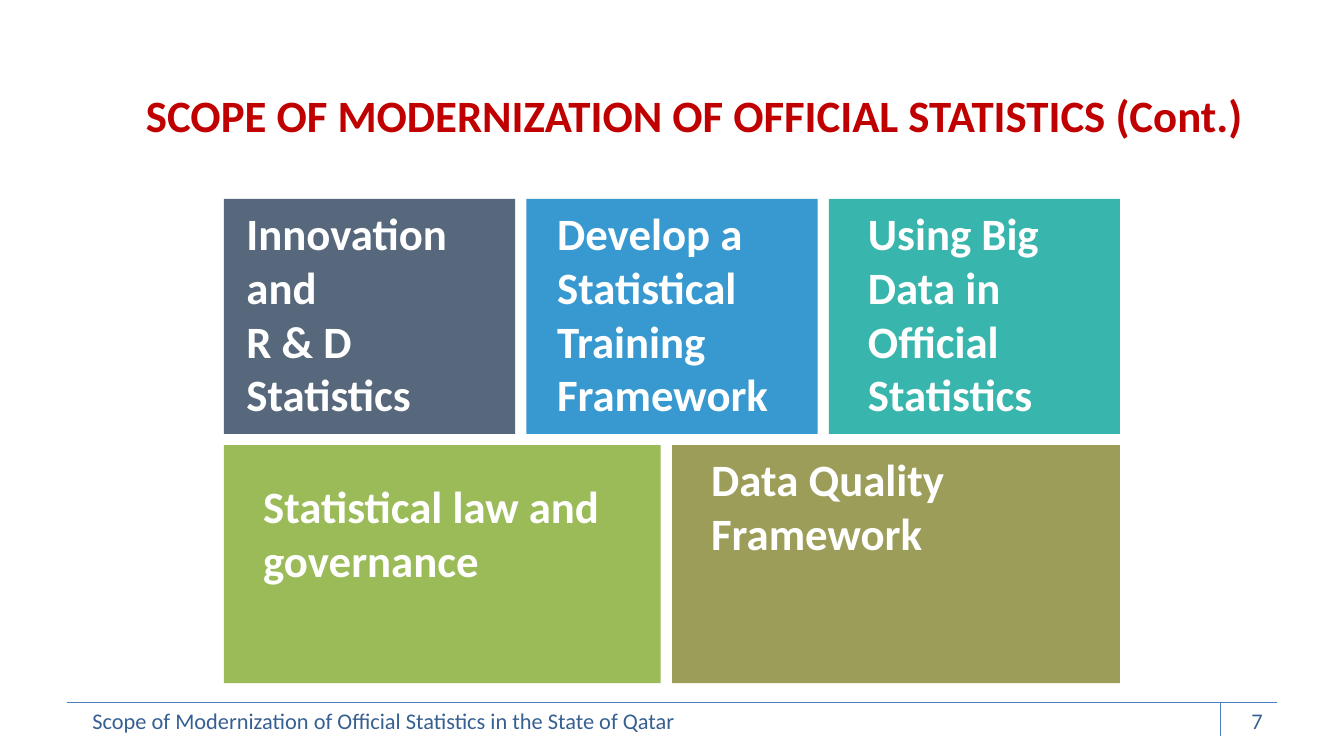
from dataclasses import dataclass

from lxml.etree import SubElement
from pptx import Presentation
from pptx.dml.color import RGBColor
from pptx.enum.shapes import MSO_CONNECTOR, MSO_SHAPE
from pptx.enum.text import MSO_ANCHOR, PP_ALIGN
from pptx.oxml.ns import qn
from pptx.util import Pt

EMU_PER_PX = 9525


@dataclass(frozen=True)
class Theme:
    """Colours and type of the slide."""
    font: str = "Calibri"
    heading_size: int = 24
    footer_size: int = 12
    title: str = "C00000"
    footer: str = "376092"
    rule: str = "4B7EBC"
    tile_text: str = "FFFFFF"
    slate: str = "57687C"
    blue: str = "0680C3"
    teal: str = "07A398"
    green: str = "9BBB59"
    olive: str = "9B9D59"


THEME = Theme()


def px(*lengths):
    """Turn pixel lengths into EMU."""
    return [length * EMU_PER_PX for length in lengths]


def write_text(shape, text, size=THEME.heading_size, color=THEME.tile_text, bold=False,
               align=PP_ALIGN.LEFT, anchor=MSO_ANCHOR.TOP, indent=0, side=10, top=5):
    """Fill a shape with one formatted paragraph per line of text."""
    frame = shape.text_frame
    frame.word_wrap = True
    frame.vertical_anchor = anchor
    frame.margin_left, frame.margin_right, frame.margin_top, frame.margin_bottom = px(side, side, top, 5)
    frame.text = text
    for paragraph in frame.paragraphs:
        paragraph.alignment = align
        properties = paragraph._p.get_or_add_pPr()
        properties.set("marL", str(*px(indent)))
        properties.set("indent", "0")
        font = paragraph.runs[0].font
        font.name, font.size, font.bold = THEME.font, Pt(size), bold
        font.color.rgb = RGBColor.from_string(color)


def add_label(slide, box, text, **style):
    """Add a text box."""
    write_text(slide.shapes.add_textbox(*px(*box)), text, **style)


def add_tile(slide, box, text, color, opacity=100, **style):
    """Add a filled rectangle with bold text."""
    tile = slide.shapes.add_shape(MSO_SHAPE.RECTANGLE, *px(*box))
    tile.shadow.inherit = False
    tile.line.fill.background()
    tile.fill.solid()
    tile.fill.fore_color.rgb = RGBColor.from_string(color)
    if opacity < 100:
        color_element = tile._element.spPr.find(qn("a:solidFill"))[0]
        SubElement(color_element, qn("a:alpha")).set("val", str(opacity * 1000))
    write_text(tile, text, bold=True, **style)


def add_rule(slide, *ends):
    """Add a thin straight line."""
    rule = slide.shapes.add_connector(MSO_CONNECTOR.STRAIGHT, *px(*ends))
    rule.line.color.rgb = RGBColor.from_string(THEME.rule)
    rule.line.width = Pt(0.75)
    SubElement(rule._element.spPr, qn("a:effectLst"))


def add_tile_row(slide, top, height, tiles):
    """Lay tiles from left to right with equal gaps."""
    left, gap = 160, 8
    for width, text, color, style in tiles:
        add_tile(slide, (left, top, width, height), text, color, **style)
        left += width + gap


def add_footer(slide):
    """Add the footer rules, deck title and slide number."""
    style = dict(size=THEME.footer_size, color=THEME.footer)
    add_label(slide, (56, 500, 528, 48),
              "Scope of Modernization of Official Statistics in the State of Qatar", **style)
    add_rule(slide, 48, 502, 912, 502)
    add_rule(slide, 872, 502, 872, 526)
    add_label(slide, (688, 500, 224, 29), "7", align=PP_ALIGN.RIGHT, **style)


def main():
    """Build and save the slide."""
    presentation = Presentation()
    presentation.slide_width, presentation.slide_height = px(960, 540)
    slide = presentation.slides.add_slide(presentation.slide_layouts[6])
    add_footer(slide)
    add_tile_row(slide, 142, 168, [
        (208, "Innovation and\nR & D Statistics", THEME.slate, dict(indent=6)),
        (208, "Develop a Statistical Training Framework", THEME.blue,
         dict(indent=18, side=4, opacity=80)),
        (208, "Using Big Data in Official\nStatistics", THEME.teal, dict(indent=18, opacity=80)),
    ])
    add_tile_row(slide, 318, 170, [
        (312, "Statistical law and governance", THEME.green, dict(indent=18, top=24)),
        (320, "Data Quality Framework", THEME.olive, dict(indent=18)),
    ])
    add_label(slide, (64, 37, 864, 90), "SCOPE OF MODERNIZATION OF OFFICIAL STATISTICS (Cont.)",
              color=THEME.title, bold=True, align=PP_ALIGN.CENTER, anchor=MSO_ANCHOR.MIDDLE)
    presentation.save("out.pptx")


if __name__ == "__main__":
    main()
